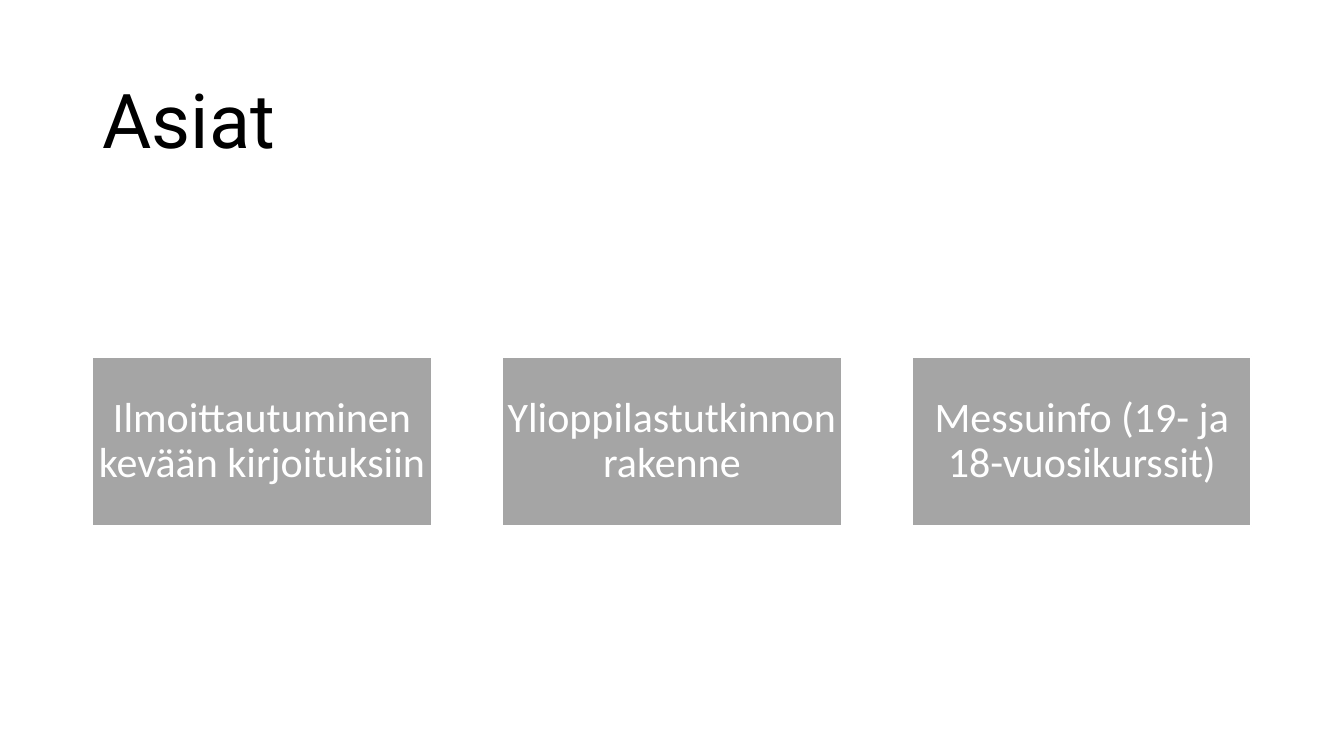
from pptx import Presentation
from pptx.dml.color import RGBColor
from pptx.enum.shapes import MSO_SHAPE
from pptx.enum.text import MSO_ANCHOR, PP_ALIGN
from pptx.util import Inches, Pt

BLACK = RGBColor(0x00, 0x00, 0x00)
WHITE = RGBColor(0xFF, 0xFF, 0xFF)
GREY = RGBColor(0xA5, 0xA5, 0xA5)

WIDTH, HEIGHT = 13.33, 7.5
LEFT, SPAN = 0.92, 11.49
GAP_SHARE = 0.21
TOPICS = [
    "Ilmoittautuminen kevään kirjoituksiin",
    "Ylioppilastutkinnon rakenne",
    "Messuinfo (19- ja 18-vuosikurssit)",
]


def write(frame, text, font, size, color, align):
    frame.word_wrap = True
    frame.vertical_anchor = MSO_ANCHOR.MIDDLE
    frame.text = text
    line = frame.paragraphs[0]
    line.alignment = align
    line.line_spacing = 0.9
    style = line.runs[0].font
    style.name = font
    style.size = Pt(size)
    style.color.rgb = color


def add_title(slide, box, text):
    frame = slide.shapes.add_textbox(*map(Inches, box)).text_frame
    write(frame, text, "Roboto", 54, BLACK, PP_ALIGN.LEFT)
    frame.paragraphs[0].space_after = Pt(6)


def add_card(slide, box, text):
    card = slide.shapes.add_shape(MSO_SHAPE.RECTANGLE, *map(Inches, box))
    card.shadow.inherit = False
    card.fill.solid()
    card.fill.fore_color.rgb = GREY
    card.line.color.rgb = WHITE
    card.line.width = Pt(1)
    frame = card.text_frame
    frame.margin_left = frame.margin_right = Inches(0.02)
    frame.margin_top = frame.margin_bottom = Inches(0.02)
    write(frame, text, "Calibri", 30, WHITE, PP_ALIGN.CENTER)


def add_row(slide, box, topics):
    left, top, span, height = box
    count = len(topics)
    width = span / (count + (count - 1) * GAP_SHARE)
    step = width * (1 + GAP_SHARE)
    for col, topic in enumerate(topics):
        add_card(slide, (left + col * step, top, width, height), topic)


def main():
    deck = Presentation()
    deck.slide_width = Inches(WIDTH)
    deck.slide_height = Inches(HEIGHT)
    slide = deck.slides.add_slide(deck.slide_layouts[6])
    add_title(slide, (LEFT, 0.61, 11.5, 1.24), "Asiat")
    add_row(slide, (LEFT, 3.54, SPAN, 1.68), TOPICS)
    deck.save("out.pptx")


if __name__ == "__main__":
    main()
